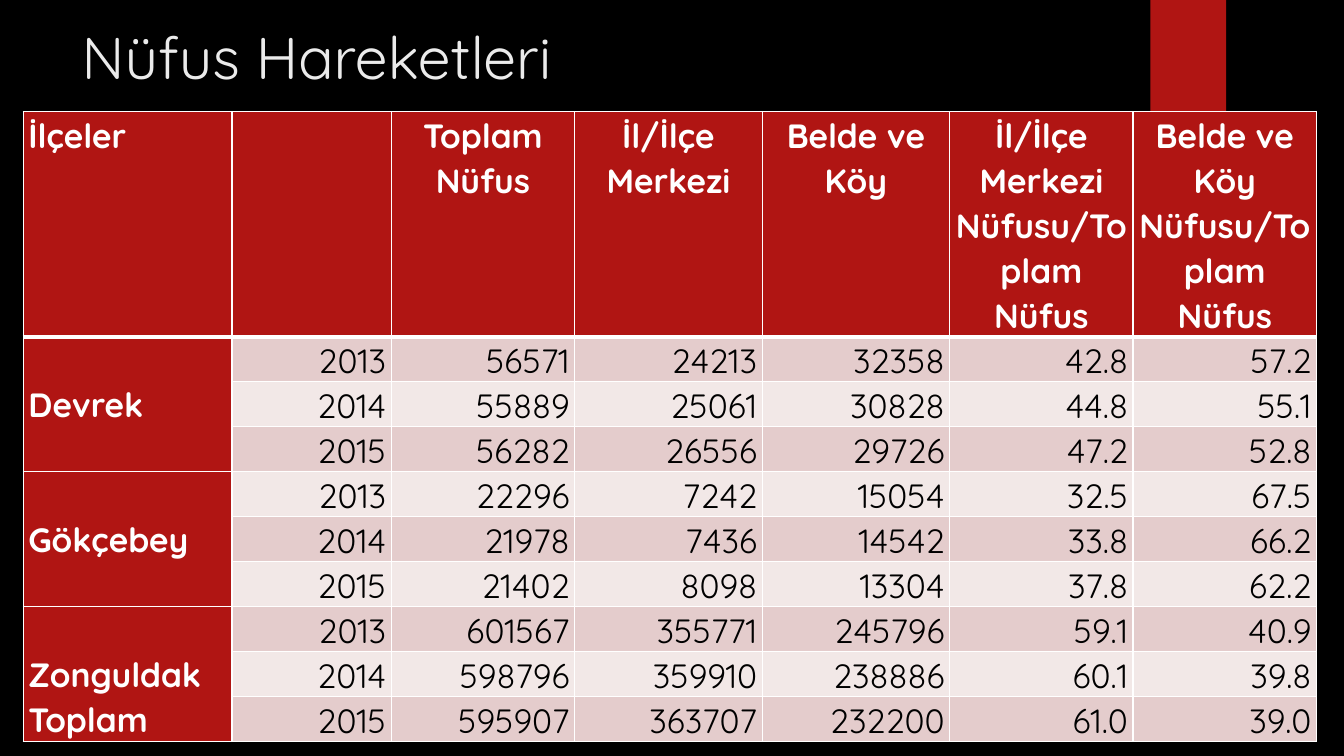
from dataclasses import dataclass

from lxml import etree
from pptx import Presentation
from pptx import util as u
from pptx.dml.color import RGBColor
from pptx.enum import shapes, text
from pptx.oxml.ns import qn


@dataclass(frozen=True)
class Theme:
    font: str = "Quicksand"
    black: str = "000000"
    white: str = "FFFFFF"
    title: str = "EBEBEB"
    red: str = "B01513"
    bands: tuple[str, str] = ("E4CCCC", "F2E8E7")
    title_size: int = 42
    table_size: int = 24
    line_spacing: float = 1.07
    border: int = 1
    header_border: int = 3


@dataclass(frozen=True)
class Area:
    x: float
    y: float
    w: float
    h: float


@dataclass(frozen=True)
class District:
    name: str
    years: tuple[str, ...]


T = Theme()
ALIGN = text.PP_ALIGN
WIDTH, HEIGHT = u.Inches(13.33), u.Inches(7.5)

TITLE_AREA = Area(5.33, 1.73, 77.19, 11.33)
RIBBON_AREA = Area(85.6, 0, 5.63, 16.67)
TABLE_AREA = Area(1.73, 14.8, 96.4, 79.87)
COLUMNS = (15.53, 11.85, 13.65, 13.95, 13.95, 13.65, 13.65)
HEADER_ROW, YEAR_ROW = 14.53, 5.47
INSET = 0.38
NAME_DROP = 5.87

HEADERS = (
    "İlçeler", "", "Toplam Nüfus", "İl/İlçe Merkezi", "Belde ve Köy",
    "İl/İlçe Merkezi Nüfusu/Toplam Nüfus", "Belde ve Köy Nüfusu/Toplam Nüfus",
)
DISTRICTS = (
    District("Devrek", (
        "2013 56571 24213 32358 42.8 57.2",
        "2014 55889 25061 30828 44.8 55.1",
        "2015 56282 26556 29726 47.2 52.8",
    )),
    District("Gökçebey", (
        "2013 22296 7242 15054 32.5 67.5",
        "2014 21978 7436 14542 33.8 66.2",
        "2015 21402 8098 13304 37.8 62.2",
    )),
    District("Zonguldak Toplam", (
        "2013 601567 355771 245796 59.1 40.9",
        "2014 598796 359910 238886 60.1 39.8",
        "2015 595907 363707 232200 61.0 39.0",
    )),
)


def across(share: float) -> int:
    return round(WIDTH * share / 100)


def down(share: float) -> int:
    return round(HEIGHT * share / 100)


def box(area: Area) -> tuple[int, int, int, int]:
    return across(area.x), down(area.y), across(area.w), down(area.h)


def style(p, size: int, color: str, bold: bool = False, align=ALIGN.LEFT) -> None:
    p.alignment = align
    p.font.name = T.font
    p.font.size = u.Pt(size)
    p.font.bold = bold
    p.font.color.rgb = RGBColor.from_string(color)


def draw_borders(cell, bottom: int) -> None:
    tc_pr = cell._tc.get_or_add_tcPr()
    widths = {"a:lnL": T.border, "a:lnR": T.border, "a:lnT": T.border, "a:lnB": bottom}
    for tag, width in widths.items():
        line = etree.SubElement(tc_pr, qn(tag), w=str(u.Pt(width)))
        fill = etree.SubElement(line, qn("a:solidFill"))
        etree.SubElement(fill, qn("a:srgbClr"), val=T.white)


def fill_cell(cell, words: str, fill: str, color: str, bold: bool, align,
              bottom: int = T.border, drop: float = 0) -> None:
    draw_borders(cell, bottom)
    cell.fill.solid()
    cell.fill.fore_color.rgb = RGBColor.from_string(fill)
    cell.margin_left = cell.margin_right = across(INSET)
    cell.margin_top, cell.margin_bottom = down(drop), 0
    cell.text = words
    p = cell.text_frame.paragraphs[0]
    p.line_spacing = T.line_spacing
    style(p, T.table_size, color, bold, align)


def draw_title(slide) -> None:
    sp = slide.shapes.title
    sp.left, sp.top, sp.width, sp.height = box(TITLE_AREA)
    tf = sp.text_frame
    tf.text = "Nüfus Hareketleri"
    tf.vertical_anchor = text.MSO_ANCHOR.MIDDLE
    style(tf.paragraphs[0], T.title_size, T.title)


def draw_ribbon(slide) -> None:
    sp = slide.shapes.add_shape(shapes.MSO_SHAPE.RECTANGLE, *box(RIBBON_AREA))
    sp.shadow.inherit = False
    sp.fill.solid()
    sp.fill.fore_color.rgb = RGBColor.from_string(T.red)
    sp.line.fill.background()


def draw_table(slide) -> None:
    row_count = 1 + sum(len(d.years) for d in DISTRICTS)
    frame = slide.shapes.add_table(row_count, len(COLUMNS), *box(TABLE_AREA))
    table = frame.table
    for column, share in zip(table.columns, COLUMNS):
        column.width = across(share)
    for i, row in enumerate(table.rows):
        row.height = down(YEAR_ROW if i else HEADER_ROW)
    frame.height = down(TABLE_AREA.h)

    for c, words in enumerate(HEADERS):
        fill_cell(table.cell(0, c), words, T.red, T.white, True,
                  ALIGN.CENTER if c else ALIGN.LEFT, T.header_border)

    row = 1
    for district in DISTRICTS:
        first = table.cell(row, 0)
        first.merge(table.cell(row + len(district.years) - 1, 0))
        fill_cell(first, district.name, T.red, T.white, True, ALIGN.LEFT, drop=NAME_DROP)
        for year in district.years:
            for c, value in enumerate(year.split(), 1):
                fill_cell(table.cell(row, c), value, T.bands[(row - 1) % 2],
                          T.black, False, ALIGN.RIGHT)
            row += 1


def main() -> None:
    prs = Presentation()
    prs.slide_width, prs.slide_height = WIDTH, HEIGHT
    slide = prs.slides.add_slide(prs.slide_layouts.get_by_name("Title Only"))
    slide.background.fill.solid()
    slide.background.fill.fore_color.rgb = RGBColor.from_string(T.black)
    draw_ribbon(slide)
    draw_title(slide)
    draw_table(slide)
    prs.save("out.pptx")


if __name__ == "__main__":
    main()
